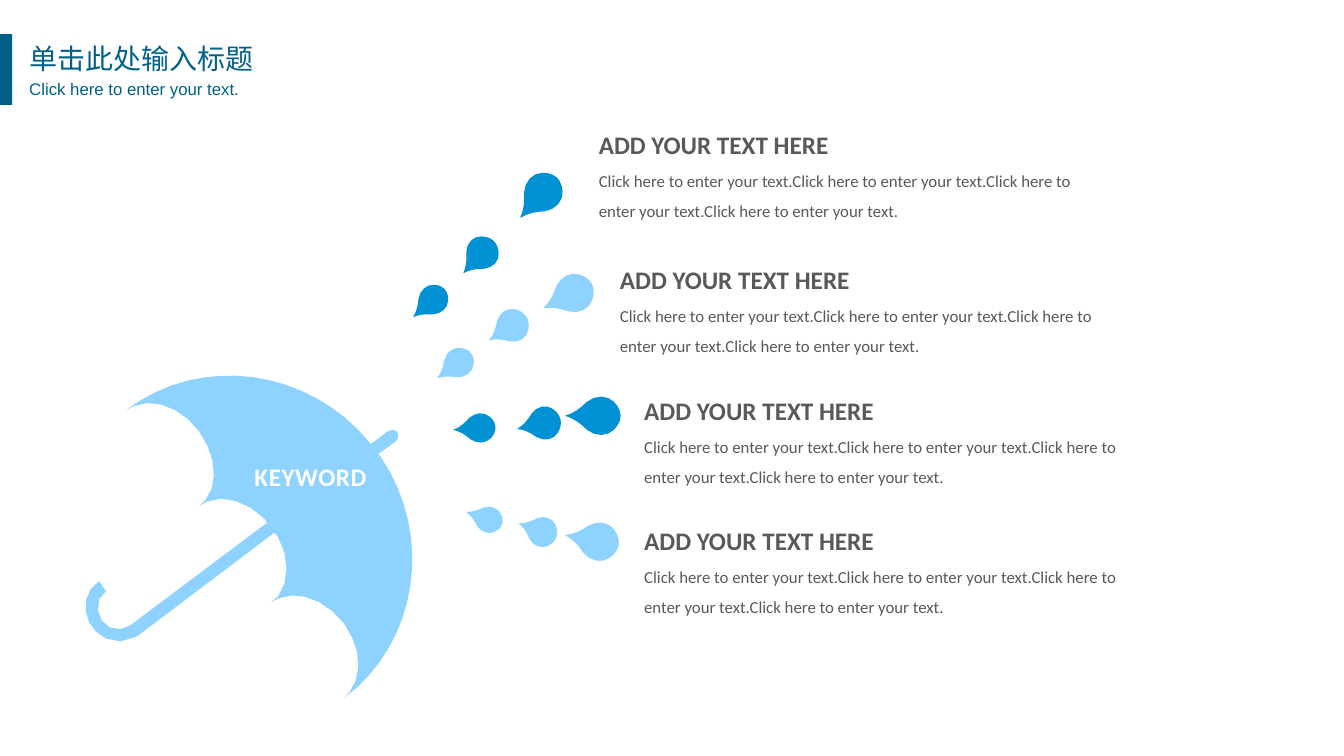
import math
from dataclasses import dataclass
from typing import NamedTuple

from lxml import etree
from pptx import Presentation
from pptx import util as u
from pptx.dml.color import RGBColor
from pptx.enum import shapes, text
from pptx.oxml import ns
from pptx.slide import Slide

Point = tuple[float, float]
Segment = tuple[Point, ...]


@dataclass(frozen=True)
class Theme:
    navy: str = "006088"
    blue: str = "0091D4"
    sky: str = "8ED2FF"
    gray: str = "595959"
    white: str = "FFFFFF"
    title_size: int = 20
    heading_size: int = 18
    body_size: int = 12
    font: str = "Calibri"
    subtitle_font: str = "Arial"
    title_font: str = "Noto Sans CJK SC"


class Box(NamedTuple):
    column: float
    row: float
    width: float
    height: float


class Drop(NamedTuple):
    box: Box
    angle: float


class Trail(NamedTuple):
    color: str
    drops: tuple[Drop, ...]
    text_column: float
    text_row: float


THEME = Theme()
COLUMNS, ROWS = 133.3, 75
SLIDE_WIDTH, SLIDE_HEIGHT = u.Inches(13.33), u.Inches(7.5)
DROP_STRIDE, UMBRELLA_STRIDE = 0.15, 1.6
BODY_OFFSET = 3.1
HEADING = "ADD YOUR TEXT HERE"
SENTENCE = "Click here to enter your text."

TRAILS = (
    Trail(THEME.blue, (
        Drop(Box(41.1, 28, 2.9, 4.2), 49),
        Drop(Box(45.8, 23.3, 3.3, 4.4), 43),
        Drop(Box(51.5, 16.9, 3.8, 5.4), 42)), 58.4, 12.3),
    Trail(THEME.sky, (
        Drop(Box(43.6, 34.2, 2.9, 4.2), 54),
        Drop(Box(48.7, 30.4, 3.3, 4.4), 58),
        Drop(Box(54.4, 26.7, 3.8, 5.4), 64)), 60.5, 25.7),
    Trail(THEME.blue, (
        Drop(Box(45.6, 40.4, 2.9, 4.2), 86),
        Drop(Box(51.8, 39.9, 3.3, 4.4), 78),
        Drop(Box(56.9, 38.5, 3.8, 5.5), 90)), 62.9, 38.7),
    Trail(THEME.sky, (
        Drop(Box(46.7, 49.5, 2.6, 3.8), 109),
        Drop(Box(51.8, 50.6, 3, 4), 110),
        Drop(Box(56.8, 50.9, 3.8, 5.4), 101)), 62.9, 51.6),
)

DROP_SIDE: tuple[Segment, ...] = (
    ((0.12, -0.5), (0.25, -0.46), (0.36, -0.38)),
    ((0.54, -0.26), (0.54, -0.04), (0.36, 0.11)),
    ((0.2, 0.22), (0.07, 0.34), (0, 0.5)),
)

UMBRELLA_BOX = Box(7.2, 35.7, 35.8, 35.8)
UMBRELLA_ANGLE = 53
UMBRELLA_START: Point = (39.4, 42.8)
UMBRELLA: tuple[Segment, ...] = (
    ((39.6, 43.1), (39.5, 43.5), (39.3, 43.7)),
    ((37.5, 45),),
    ((37.7, 45.2),),
    ((42.7, 52.5), (41.7, 62.3), (35.5, 68.1)),
    ((34.1, 69.2),),
    ((34.7, 68.6),),
    ((36, 66.9), (35.8, 64.1), (34.1, 61.8)),
    ((32.3, 59.5), (29.7, 58.5), (27.7, 59.3)),
    ((26.9, 59.7),),
    ((27.6, 59.1),),
    ((28.7, 57.6), (28.7, 55.2), (27.5, 53.1)),
    ((27.2, 52.8),),
    ((13.7, 63),),
    ((13.3, 63.2),),
    ((12.5, 63.7), (11.4, 63.7), (10.5, 63.3)),
    ((9.4, 62.8), (8.6, 61.7), (8.5, 60.6)),
    ((8.3, 59.4), (8.8, 58.3), (9.8, 57.6)),
    ((10.5, 58.6),),
    ((9.9, 59), (9.6, 59.7), (9.7, 60.5)),
    ((9.8, 61.2), (10.2, 61.9), (10.9, 62.2)),
    ((11.6, 62.5), (12.4, 62.4), (12.9, 62)),
    ((26.5, 51.8),),
    ((26.2, 51.4),),
    ((24.5, 49.7), (22.2, 49), (20.5, 49.7)),
    ((19.7, 50.2),),
    ((20.4, 49.5),),
    ((21.7, 47.9), (21.4, 45), (19.7, 42.7)),
    ((18, 40.4), (15.3, 39.4), (13.3, 40.2)),
    ((12.5, 40.6),),
    ((14, 39.6),),
    ((21.3, 35.2), (31, 37), (36.6, 43.8)),
    ((36.8, 44),),
    ((38.5, 42.7),),
    ((38.8, 42.5), (39.2, 42.6), (39.4, 42.8)),
)


def x(columns: float) -> u.Emu:
    return u.Emu(round(SLIDE_WIDTH * columns / COLUMNS))


def y(rows: float) -> u.Emu:
    return u.Emu(round(SLIDE_HEIGHT * rows / ROWS))


def place(box: Box) -> tuple[u.Emu, u.Emu, u.Emu, u.Emu]:
    return x(box.column), y(box.row), x(box.width), y(box.height)


def trace(start: Point, segments: tuple[Segment, ...], stride: float) -> list[Point]:
    points = [start]
    for segment in segments:
        if len(segment) == 1:
            points.append(segment[0])
            continue
        controls = (points[-1], *segment)
        steps = max(2, math.ceil(math.dist(controls[0], controls[3]) / stride))
        for step in range(1, steps + 1):
            t = step / steps
            weights = [math.comb(3, k) * t**k * (1 - t)**(3 - k) for k in range(4)]
            points.append((sum(w * c[0] for w, c in zip(weights, controls)),
                           sum(w * c[1] for w, c in zip(weights, controls))))
    return points


def turn_back(point: Point, box: Box, angle: float) -> Point:
    center_x, center_y = box.column + box.width / 2, box.row + box.height / 2
    dx, dy = point[0] - center_x, point[1] - center_y
    cosine, sine = math.cos(math.radians(angle)), math.sin(math.radians(angle))
    return center_x + dx * cosine + dy * sine, center_y - dx * sine + dy * cosine


def paint(shape, color: str) -> None:
    shape.fill.solid()
    shape.fill.fore_color.rgb = RGBColor.from_string(color)
    shape.line.fill.background()
    shape.shadow.inherit = False


def add_outline(slide: Slide, points: list[Point], box: Box, angle: float, color: str) -> None:
    corners = [(x(column), y(row)) for column, row in points]
    builder = slide.shapes.build_freeform(*corners[0])
    builder.add_line_segments(corners[1:], close=True)
    shape = builder.convert_to_shape()
    shape.left, shape.top, shape.width, shape.height = place(box)
    shape.rotation = angle
    paint(shape, color)


def add_drop(slide: Slide, drop: Drop, color: str) -> None:
    box = drop.box
    side = trace((0, -0.5), DROP_SIDE, DROP_STRIDE)
    outline = side + [(-across, along) for across, along in reversed(side[1:-1])]
    points = [(box.column + (across + 0.5) * box.width, box.row + (along + 0.5) * box.height)
              for across, along in outline]
    add_outline(slide, points, box, drop.angle, color)


def add_text(slide: Slide, words: str, box: Box, *, size: int, color: str, font: str = THEME.font,
             bold: bool = False, align=text.PP_ALIGN.LEFT, line_spacing: float = 1.0,
             space_before: float = 0, inset: float | None = None, tracking: int = 0) -> None:
    frame = slide.shapes.add_textbox(*place(box)).text_frame
    frame.word_wrap = True
    frame.auto_size = text.MSO_AUTO_SIZE.SHAPE_TO_FIT_TEXT
    if inset is not None:
        frame.margin_left = frame.margin_right = x(inset)
        frame.margin_top = frame.margin_bottom = y(inset)
    paragraph = frame.paragraphs[0]
    paragraph.alignment = align
    paragraph.line_spacing = line_spacing
    paragraph.space_before = u.Pt(space_before)
    run = paragraph.add_run()
    run.text = words
    run.font.size, run.font.bold, run.font.name = u.Pt(size), bold, font
    run.font.color.rgb = RGBColor.from_string(color)
    properties = run._r.get_or_add_rPr()
    etree.SubElement(properties, ns.qn("a:ea")).set("typeface", font)
    if tracking:
        properties.set("spc", str(tracking))


def main() -> None:
    presentation = Presentation()
    presentation.slide_width, presentation.slide_height = SLIDE_WIDTH, SLIDE_HEIGHT
    slide = presentation.slides.add_slide(presentation.slide_layouts[6])

    umbrella = [turn_back(point, UMBRELLA_BOX, UMBRELLA_ANGLE)
                for point in trace(UMBRELLA_START, UMBRELLA, UMBRELLA_STRIDE)]
    add_outline(slide, umbrella, UMBRELLA_BOX, UMBRELLA_ANGLE, THEME.sky)
    add_text(slide, "KEYWORD", Box(23.2, 45.8, 15.2, 3), size=THEME.heading_size, color=THEME.white,
             bold=True, align=text.PP_ALIGN.CENTER, inset=0, tracking=40)

    for trail in TRAILS:
        for drop in trail.drops:
            add_drop(slide, drop, trail.color)
        add_text(slide, HEADING, Box(trail.text_column, trail.text_row, 31.5, 4),
                 size=THEME.heading_size, color=THEME.gray, bold=True)
        add_text(slide, SENTENCE * 4, Box(trail.text_column, trail.text_row + BODY_OFFSET, 51.9, 7),
                 size=THEME.body_size, color=THEME.gray, line_spacing=1.5)

    add_text(slide, "单击此处输入标题", Box(1.9, 3.6, 25.9, 4.6), size=THEME.title_size,
             color=THEME.navy, font=THEME.title_font)
    add_text(slide, SENTENCE, Box(2.5, 7, 24.7, 3.2), size=THEME.body_size, color=THEME.navy,
             font=THEME.subtitle_font, align=text.PP_ALIGN.JUSTIFY, line_spacing=1.2,
             space_before=2.4, inset=0.4)
    marker = slide.shapes.add_shape(shapes.MSO_SHAPE.RECTANGLE, *place(Box(0, 3.4, 1.2, 7)))
    paint(marker, THEME.navy)
    presentation.save("out.pptx")


if __name__ == "__main__":
    main()
